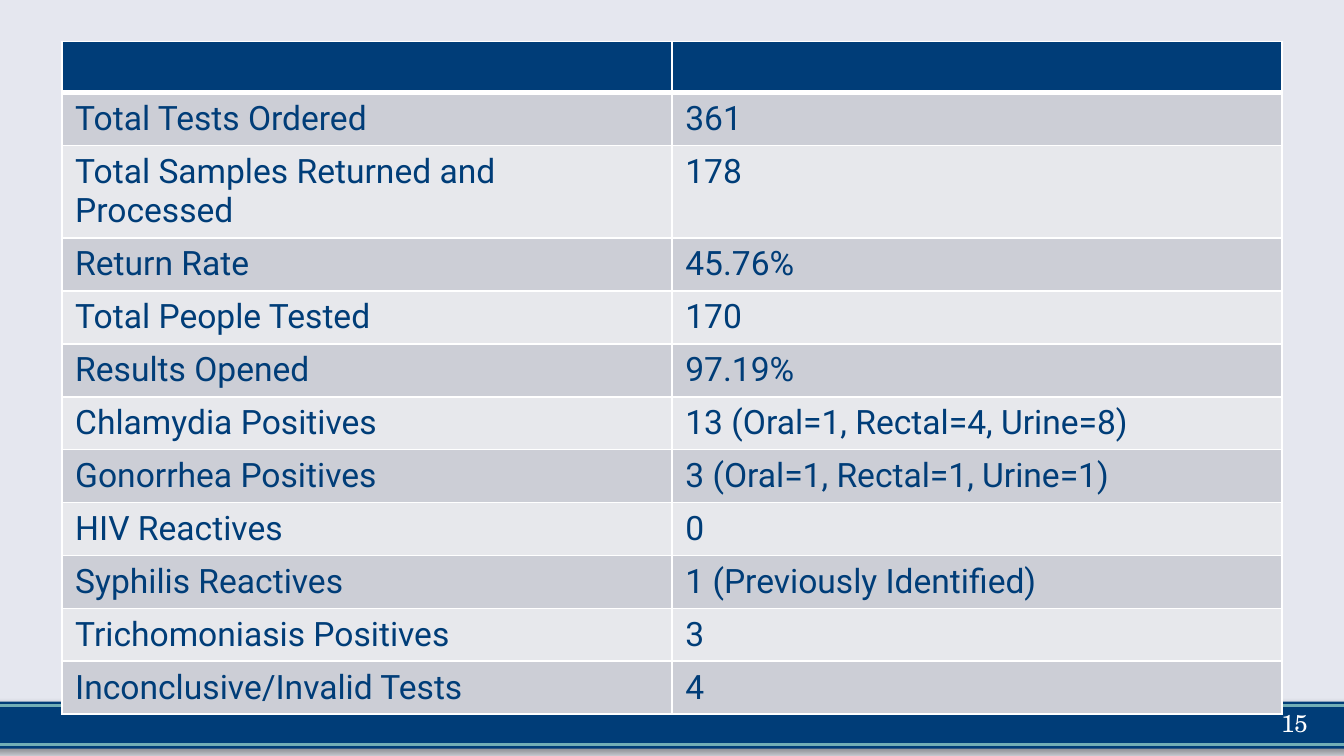
"""Build the slide with the table of home test results."""
from dataclasses import dataclass

from lxml import etree
from pptx import Presentation
from pptx.dml.color import RGBColor
from pptx.enum.shapes import MSO_CONNECTOR, MSO_SHAPE
from pptx.enum.text import MSO_ANCHOR, PP_ALIGN
from pptx.oxml import parse_xml
from pptx.oxml.ns import nsdecls, qn
from pptx.util import Inches, Pt

RECTANGLE = MSO_SHAPE.RECTANGLE
STRAIGHT = MSO_CONNECTOR.STRAIGHT
MIDDLE = MSO_ANCHOR.MIDDLE
RIGHT = PP_ALIGN.RIGHT


@dataclass(frozen=True)
class Theme:
    background: str = "E5E7EF"
    navy: str = "003D78"
    teal: str = "72AEB6"
    white: str = "FFFFFF"
    bands: tuple[str, str] = ("E7E8EC", "CCCED6")
    body_font: str = "Roboto"
    number_font: str = "TeX Gyre Schola"
    body_size: float = 18
    number_size: float = 13
    rule_width: float = 1.5
    border_width: float = 1
    header_border_width: float = 3


@dataclass(frozen=True)
class Result:
    measure: str
    value: str


THEME = Theme()
RESULTS = [
    Result("Total Tests Ordered", "361"),
    Result("Total Samples Returned and Processed", "178"),
    Result("Return Rate", "45.76%"),
    Result("Total People Tested", "170"),
    Result("Results Opened", "97.19%"),
    Result("Chlamydia Positives", "13 (Oral=1, Rectal=4, Urine=8)"),
    Result("Gonorrhea Positives", "3 (Oral=1, Rectal=1, Urine=1)"),
    Result("HIV Reactives", "0"),
    Result("Syphilis Reactives", "1 (Previously Identified)"),
    Result("Trichomoniasis Positives", "3"),
    Result("Inconclusive/Invalid Tests", "4"),
]
FOOTER_RULES = (5.25, 5.54)


def paint(fill, color: str) -> None:
    """Give a fill one solid colour."""
    fill.solid()
    fill.fore_color.rgb = RGBColor.from_string(color)


def write(p, text: str, font: str, size: float, color: str) -> None:
    """Add one formatted run to a paragraph."""
    r = p.add_run()
    r.text = text
    r.font.name = font
    r.font.size = Pt(size)
    r.font.color.rgb = RGBColor.from_string(color)


def add_footer_bar(slide) -> None:
    """Draw the navy footer bar with its soft shadow."""
    sp = slide.shapes.add_shape(
        RECTANGLE, Inches(-0.1), Inches(5.22), Inches(10.2), Inches(0.35))
    paint(sp.fill, THEME.navy)
    sp.line.fill.background()
    sp._element.spPr.append(parse_xml(
        f'<a:effectLst {nsdecls("a")}>'
        f'<a:outerShdw blurRad="{Pt(4)}" dist="{Pt(3)}" dir="2700000" rotWithShape="0">'
        '<a:srgbClr val="000000"><a:alpha val="40000"/></a:srgbClr>'
        '</a:outerShdw></a:effectLst>'))


def add_footer_rule(slide, y: float) -> None:
    """Draw one teal line across the footer."""
    line = slide.shapes.add_connector(
        STRAIGHT, Inches(-0.1), Inches(y), Inches(10.1), Inches(y))
    line.line.color.rgb = RGBColor.from_string(THEME.teal)
    line.line.width = Pt(THEME.rule_width)
    etree.SubElement(line._element.spPr, qn("a:effectLst"))


def set_borders(cell, top: float, bottom: float) -> None:
    """Draw white borders on the four sides of a cell."""
    side = THEME.border_width
    widths = {"lnL": side, "lnR": side, "lnT": top, "lnB": bottom}
    tc_pr = cell._tc.get_or_add_tcPr()
    for i, (tag, width) in enumerate(widths.items()):
        tc_pr.insert(i, parse_xml(
            f'<a:{tag} {nsdecls("a")} w="{Pt(width)}"><a:solidFill>'
            f'<a:srgbClr val="{THEME.white}"/></a:solidFill></a:{tag}>'))


def add_results_table(slide, results: list[Result]) -> None:
    """Add the banded results table under an empty header row."""
    rows = [Result("", "")] + results
    height = Inches(0.37)
    table = slide.shapes.add_table(
        len(rows), 2, Inches(0.46), Inches(0.31), Inches(9.08),
        height * len(rows)).table
    thin, thick = THEME.border_width, THEME.header_border_width
    for i, result in enumerate(rows):
        table.rows[i].height = height
        fill = THEME.bands[i % 2] if i else THEME.navy
        for j, text in enumerate((result.measure, result.value)):
            cell = table.cell(i, j)
            set_borders(cell, thick if i == 1 else thin, thick if i == 0 else thin)
            paint(cell.fill, fill)
            write(cell.text_frame.paragraphs[0], text,
                  THEME.body_font, THEME.body_size, THEME.navy)


def add_slide_number(slide, number: str) -> None:
    """Write the slide number at the right of the footer."""
    tf = slide.shapes.add_textbox(
        Inches(7.5), Inches(5.23), Inches(2.33), Inches(0.3)).text_frame
    tf.word_wrap = True
    tf.vertical_anchor = MIDDLE
    p = tf.paragraphs[0]
    p.alignment = RIGHT
    write(p, number, THEME.number_font, THEME.number_size, THEME.white)


def main() -> None:
    """Build and save the presentation."""
    prs = Presentation()
    prs.slide_width = Inches(10)
    prs.slide_height = prs.slide_width * 9 // 16
    slide = prs.slides.add_slide(prs.slide_layouts[6])
    paint(slide.background.fill, THEME.background)
    add_footer_bar(slide)
    for y in FOOTER_RULES:
        add_footer_rule(slide, y)
    add_results_table(slide, RESULTS)
    add_slide_number(slide, "15")
    prs.save("out.pptx")


if __name__ == "__main__":
    main()
